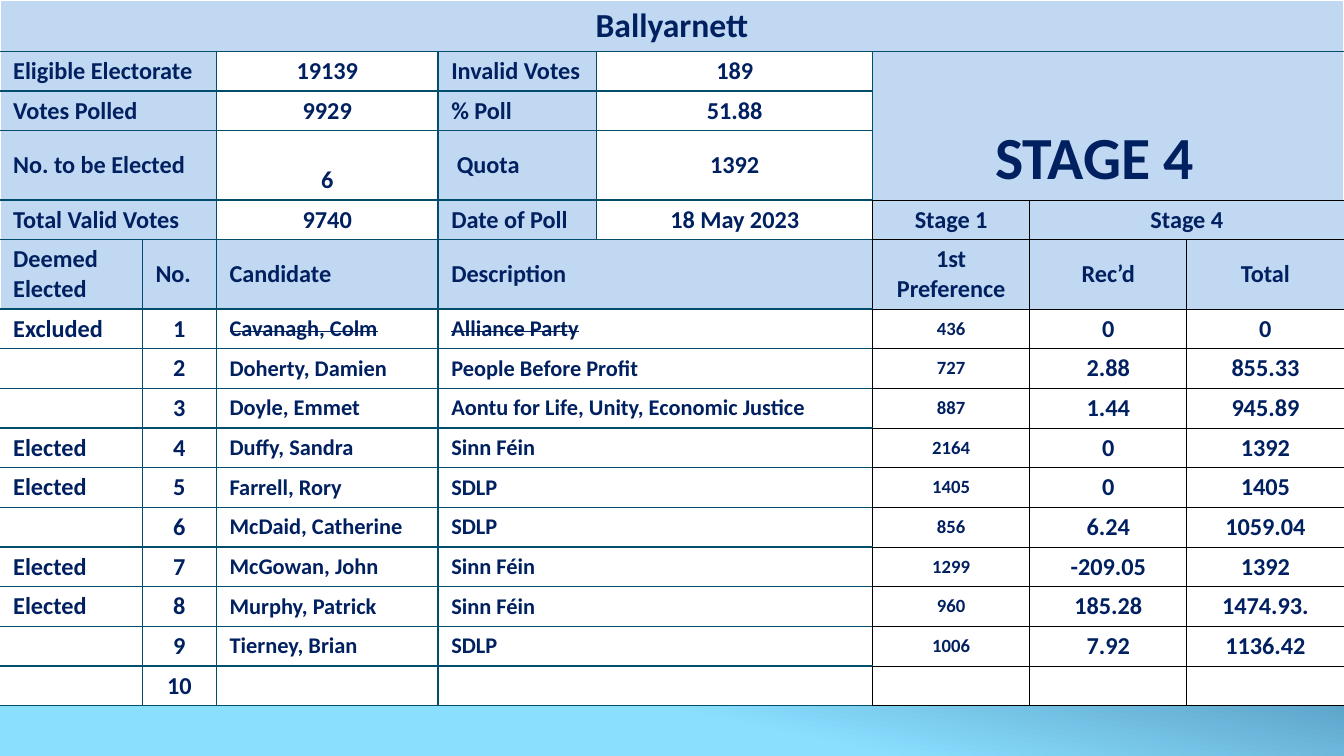
import pptx
import pptx.dml.color
import pptx.enum.text
import pptx.oxml.ns
import pptx.util
from lxml import etree

Cm = pptx.util.Cm
Pt = pptx.util.Pt
qn = pptx.oxml.ns.qn
ALIGN = pptx.enum.text.PP_ALIGN
ANCHOR = pptx.enum.text.MSO_ANCHOR

COLOURS = {
    "navy": "002060",
    "header": "C1D8F2",
    "white": "FFFFFF",
    "teal": "004E6C",
    "black": "000000",
    "deep": "0D3868",
    "sky": "8ADFFF",
}
WHITE_EDGE, TEAL_EDGE, BLACK_EDGE = ("white", 1), ("teal", 0.75), ("black", 0.5)

COLUMN_WIDTHS = [2.69, 1.4, 4.19, 3, 5.21, 2.97, 2.97, 2.97]
ROW_HEIGHTS = [0.97, 0.75, 0.75, 1.31, 0.75, 1.31] + [0.75] * 10
FIRST_STAGE_COLUMN = 5
FIRST_CANDIDATE_ROW = 6

SUMMARY = [
    ("Eligible Electorate", "19139", "Invalid Votes", "189"),
    ("Votes Polled", "9929", "% Poll", "51.88"),
    ("No. to be Elected", "6", " Quota", "1392"),
    ("Total Valid Votes", "9740", "Date of Poll", "18 May 2023"),
]
HEADINGS = ["Deemed Elected", "No.", "Candidate", "Description",
            "1st Preference", "Rec’d", "Total"]
CANDIDATES = [
    ("Excluded", "Cavanagh, Colm", "Alliance Party", "436", "0", "0"),
    ("", "Doherty, Damien", "People Before Profit", "727", "2.88", "855.33"),
    ("", "Doyle, Emmet", "Aontu for Life, Unity, Economic Justice",
     "887", "1.44", "945.89"),
    ("Elected", "Duffy, Sandra", "Sinn Féin", "2164", "0", "1392"),
    ("Elected", "Farrell, Rory", "SDLP", "1405", "0", "1405"),
    ("", "McDaid, Catherine", "SDLP", "856", "6.24", "1059.04"),
    ("Elected", "McGowan, John", "Sinn Féin", "1299", "-209.05", "1392"),
    ("Elected", "Murphy, Patrick", "Sinn Féin", "960", "185.28", "1474.93."),
    ("", "Tierney, Brian", "SDLP", "1006", "7.92", "1136.42"),
    ("", "", "", "", "", ""),
]


def rgb(name):
    return pptx.dml.color.RGBColor.from_string(COLOURS[name])


def write_text(frame, text, size=13, align=ALIGN.LEFT, strike=False):
    paragraph = frame.paragraphs[0]
    paragraph.alignment = align
    if not text:
        # An empty cell still takes its height from the end-of-paragraph size.
        etree.SubElement(paragraph._p, qn("a:endParaRPr"), sz=str(size * 100))
        return
    run = paragraph.add_run()
    run.text = text
    run.font.name = "Calibri"
    run.font.size = Pt(size)
    run.font.bold = True
    run.font.color.rgb = rgb("navy")
    if strike:
        run.font._element.set("strike", "sngStrike")


class ResultSheet:
    """Holds the slide and the look of its results table."""

    def __init__(self, slide):
        self.slide = slide
        self.table = None

    def background(self, stops, angle):
        fill = self.slide.background.fill
        fill.gradient()
        fill.gradient_angle = angle
        for stop, (position, colour) in zip(fill.gradient_stops, stops):
            stop.position = position
            stop.color.rgb = rgb(colour)

    def grid(self, widths, heights):
        self.table = self.slide.shapes.add_table(
            len(heights), len(widths), 0, 0,
            Cm(sum(widths)), Cm(sum(heights))).table
        self.table.first_row = False
        self.table.horz_banding = False
        for column, width in zip(self.table.columns, widths):
            column.width = Cm(width)
        for row, height in zip(self.table.rows, heights):
            row.height = Cm(height)

    def borders(self, cell, edges):
        """Edges come in the order left, right, top, bottom."""
        properties = cell._tc.get_or_add_tcPr()
        for index, (side, (colour, width)) in enumerate(zip("LRTB", edges)):
            line = etree.Element(qn(f"a:ln{side}"), w=str(Pt(width)))
            fill = etree.SubElement(line, qn("a:solidFill"))
            etree.SubElement(fill, qn("a:srgbClr"), val=COLOURS[colour])
            properties.insert(index, line)

    def cell(self, row, column, text, rows=1, columns=1, fill="white",
             edges=None, anchor=ANCHOR.MIDDLE, **text_format):
        cell = self.table.cell(row, column)
        if rows * columns > 1:
            cell.merge(self.table.cell(row + rows - 1, column + columns - 1))
        cell.fill.solid()
        cell.fill.fore_color.rgb = rgb(fill)
        cell.vertical_anchor = anchor
        cell.margin_left = cell.margin_right = Cm(0.25)
        cell.margin_top = cell.margin_bottom = Cm(0.09)
        self.borders(cell, edges or self.default_edges(row, column, columns))
        write_text(cell.text_frame, text, **text_format)

    def default_edges(self, row, column, columns):
        """Black around the stage counts, teal elsewhere, white at the left."""
        if column >= FIRST_STAGE_COLUMN:
            return [BLACK_EDGE] * 4
        meets_stages = column + columns == FIRST_STAGE_COLUMN and row >= 4
        return [TEAL_EDGE if column else WHITE_EDGE,
                BLACK_EDGE if meets_stages else TEAL_EDGE,
                TEAL_EDGE, TEAL_EDGE]


def add_summary(sheet):
    sheet.cell(0, 0, "Ballyarnett", columns=8, fill="header", size=18,
               align=ALIGN.CENTER,
               edges=[WHITE_EDGE, WHITE_EDGE, WHITE_EDGE, TEAL_EDGE])
    for row, (label, value, side_label, side_value) in enumerate(SUMMARY, 1):
        sheet.cell(row, 0, label, columns=2, fill="header")
        sheet.cell(row, 2, value, align=ALIGN.CENTER,
                   anchor=ANCHOR.BOTTOM if row == 3 else ANCHOR.MIDDLE)
        sheet.cell(row, 3, side_label, fill="header")
        sheet.cell(row, 4, side_value, align=ALIGN.CENTER)
    sheet.cell(1, FIRST_STAGE_COLUMN, "STAGE 4  ", rows=3, columns=3,
               fill="header", size=32, align=ALIGN.CENTER,
               anchor=ANCHOR.BOTTOM,
               edges=[TEAL_EDGE, WHITE_EDGE, TEAL_EDGE, BLACK_EDGE])
    sheet.cell(4, 5, "Stage 1", fill="header", align=ALIGN.CENTER)
    sheet.cell(4, 6, "Stage 4", columns=2, fill="header", align=ALIGN.CENTER)


def add_candidates(sheet):
    starts = [0, 1, 2, 3, 5, 6, 7]
    for column, heading in zip(starts, HEADINGS):
        sheet.cell(5, column, heading, columns=2 if column == 3 else 1,
                   fill="header",
                   align=ALIGN.CENTER if column >= 5 else ALIGN.LEFT)
    for number, candidate in enumerate(CANDIDATES, 1):
        status, name, party, first_preference, received, total = candidate
        row = FIRST_CANDIDATE_ROW + number - 1
        excluded = status == "Excluded"
        sheet.cell(row, 0, status)
        sheet.cell(row, 1, str(number), align=ALIGN.CENTER)
        sheet.cell(row, 2, name, size=12, strike=excluded)
        sheet.cell(row, 3, party, columns=2, size=12, strike=excluded)
        sheet.cell(row, 5, first_preference, size=10, align=ALIGN.CENTER)
        sheet.cell(row, 6, received, align=ALIGN.CENTER)
        sheet.cell(row, 7, total, align=ALIGN.CENTER)


def main():
    presentation = pptx.Presentation()
    presentation.slide_width = Cm(25.4)
    presentation.slide_height = Cm(14.29)
    sheet = ResultSheet(
        presentation.slides.add_slide(presentation.slide_layouts[6]))
    sheet.background([(0.42, "deep"), (0.82, "sky")], angle=258)
    sheet.grid(COLUMN_WIDTHS, ROW_HEIGHTS)
    add_summary(sheet)
    add_candidates(sheet)
    presentation.save("out.pptx")


if __name__ == "__main__":
    main()
